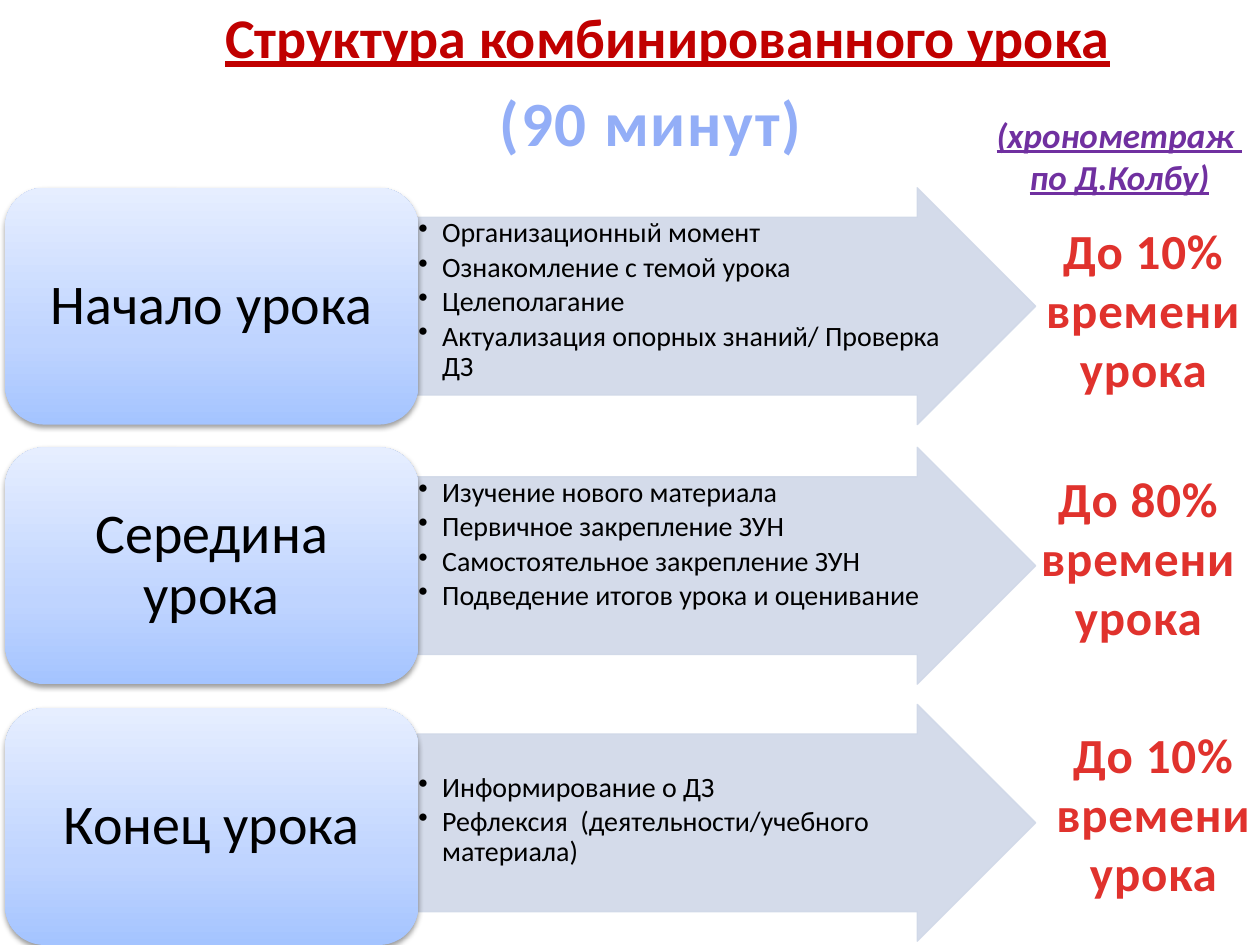
from lxml.etree import SubElement
from pptx import Presentation
from pptx.dml.color import RGBColor
from pptx.enum.shapes import MSO_SHAPE
from pptx.enum.text import MSO_ANCHOR, MSO_AUTO_SIZE, PP_ALIGN
from pptx.oxml import parse_xml
from pptx.oxml.ns import nsdecls, qn
from pptx.util import Inches, Pt

TITLE = "Структура комбинированного урока"
DURATION = "(90 минут)"
TIMING_NOTE = ["(хронометраж ", "по Д.Колбу)"]

STAGES = [
    {"name": "Начало урока", "box_top": 1.49, "arrow_top": 1.49, "list_inset": 0.01,
     "steps": ["Организационный момент", "Ознакомление с темой урока", "Целеполагание",
               "Актуализация опорных знаний/ Проверка ДЗ"],
     "share": "До 10% времени урока", "share_at": (7.87, 1.7)},
    {"name": "Середина урока", "box_top": 3.55, "arrow_top": 3.55, "list_inset": 0.01,
     "steps": ["Изучение нового материала", "Первичное закрепление ЗУН",
               "Самостоятельное закрепление ЗУН", "Подведение итогов урока и оценивание"],
     "share": "До 80% времени урока", "share_at": (7.83, 3.67)},
    {"name": "Конец урока", "box_top": 5.62, "arrow_top": 5.59, "list_inset": 0.31,
     "steps": ["Информирование о ДЗ", "Рефлексия  (деятельности/учебного материала)"],
     "share": "До 10% времени урока", "share_at": (7.95, 5.7)},
]

THEME = {
    "font": "Calibri",
    "arrow": "D0D8E8",
    "box_stops": [(0, "A4C4FF"), (35, "BFD4FF"), (100, "E6EEFF")],
    "share_stops": [(25, "E0322D"), (100, "A2201C")],
    "duration_fill": "0D7BFF",
    "duration_outline": "93AEF7",
    "title": {"size": 32, "color": "C00000", "bold": True, "underline": True},
    "duration": {"size": 36, "bold": True},
    "note": {"size": 20, "color": "7030A0", "bold": True, "italic": True, "underline": True},
    "stage": {"size": 32, "color": "000000"},
    "step": {"size": 16, "color": "000000"},
    "share": {"size": 28, "bold": True},
}

BOX_LEFT, BOX_WIDTH, ROW_HEIGHT = 0.04, 3.28, 1.88
ARROW_LEFT, ARROW_WIDTH, LIST_WIDTH = 3.31, 4.91, 4.21
SHAFT = 0.75


def gradient_xml(stops, angle):
    stop_xml = "".join(f'<a:gs pos="{place * 1000}"><a:srgbClr val="{color}"/></a:gs>'
                       for place, color in stops)
    return parse_xml(f'<a:gradFill {nsdecls("a")} rotWithShape="1"><a:gsLst>{stop_xml}</a:gsLst>'
                     f'<a:lin ang="{angle * 60000}" scaled="0"/></a:gradFill>')


def add_span(para, text, style):
    span = para.add_run()
    span.text = text
    span.font.name = THEME["font"]
    for name, value in style.items():
        if name == "size":
            span.font.size = Pt(value)
        elif name == "color":
            span.font.color.rgb = RGBColor.from_string(value)
        else:
            setattr(span.font, name, value)
    return span


def fill_frame(frame, lines, style, paragraph_format, insets=None):
    """Write one paragraph per line; insets are left, top, right, bottom in inches."""
    if insets:
        for side, inset in zip(("left", "top", "right", "bottom"), insets):
            setattr(frame, f"margin_{side}", Inches(inset))
    for index, line in enumerate(lines):
        para = frame.add_paragraph() if index else frame.paragraphs[0]
        for name, value in paragraph_format.items():
            setattr(para, name, value)
        add_span(para, line, style)


def add_text(page, place, lines, style, paragraph_format, wrap=False, grow=True, insets=None):
    frame = page.shapes.add_textbox(*map(Inches, place)).text_frame
    frame.word_wrap = wrap
    frame.auto_size = MSO_AUTO_SIZE.SHAPE_TO_FIT_TEXT if grow else MSO_AUTO_SIZE.NONE
    fill_frame(frame, lines, style, paragraph_format, insets)
    return frame


def add_arrow(page, top):
    arrow = page.shapes.add_shape(MSO_SHAPE.RIGHT_ARROW, *map(
        Inches, (ARROW_LEFT, top, ARROW_WIDTH, ROW_HEIGHT)))
    arrow.shadow.inherit = False
    arrow.adjustments[0] = SHAFT
    arrow.line.width = Pt(0.75)
    for fill in (arrow.fill, arrow.line.fill):
        fill.solid()
        fill.fore_color.rgb = RGBColor.from_string(THEME["arrow"])
    for color in list(arrow._element.spPr.iter(qn("a:srgbClr"))):
        SubElement(color, qn("a:alpha"), val="90000")


def add_steps(page, stage):
    top = stage["arrow_top"] + ROW_HEIGHT * (1 - SHAFT) / 2
    frame = add_text(page, (ARROW_LEFT, top, LIST_WIDTH, ROW_HEIGHT * SHAFT), stage["steps"],
                     THEME["step"], {"level": 1, "line_spacing": 0.9, "space_after": Pt(2.4)},
                     wrap=True, grow=False, insets=(0.01, stage["list_inset"], 0.01, 0.01))
    for para in frame.paragraphs:
        properties = para._p.get_or_add_pPr()
        properties.set("marL", str(Inches(0.19)))
        properties.set("indent", str(Inches(-0.19)))
        SubElement(properties, qn("a:buChar"), char="•")


def add_stage_box(page, stage):
    box = page.shapes.add_shape(MSO_SHAPE.ROUNDED_RECTANGLE, *map(
        Inches, (BOX_LEFT, stage["box_top"], BOX_WIDTH, ROW_HEIGHT)))
    box.line.fill.background()
    box.shadow.inherit = False
    properties = box._element.spPr
    properties.find(qn("a:prstGeom")).addnext(gradient_xml(THEME["box_stops"], 270))
    properties.find(qn("a:effectLst")).append(parse_xml(
        f'<a:outerShdw {nsdecls("a")} blurRad="{Pt(3.1)}" dist="{Pt(1.6)}" dir="5400000" '
        'rotWithShape="0"><a:srgbClr val="000000"><a:alpha val="38000"/></a:srgbClr>'
        '</a:outerShdw>'))
    box.text_frame.word_wrap = True
    box.text_frame.vertical_anchor = MSO_ANCHOR.MIDDLE
    fill_frame(box.text_frame, [stage["name"]], THEME["stage"],
               {"alignment": PP_ALIGN.CENTER, "line_spacing": 0.9}, (0.13, 0.07, 0.13, 0.07))


def add_duration(page):
    frame = add_text(page, (3.85, 0.61, 2.63, 0.71), [DURATION], THEME["duration"], CENTERED)
    properties = frame.paragraphs[0].runs[0].font._element
    properties.set("spc", "100")
    properties.insert(0, parse_xml(
        f'<a:solidFill {nsdecls("a")}><a:srgbClr val="{THEME["duration_fill"]}">'
        '<a:alpha val="6000"/></a:srgbClr></a:solidFill>'))
    properties.insert(0, parse_xml(
        f'<a:ln {nsdecls("a")} w="{Pt(1.42)}"><a:solidFill>'
        f'<a:srgbClr val="{THEME["duration_outline"]}"/></a:solidFill></a:ln>'))


def add_share(page, stage):
    frame = add_text(page, (*stage["share_at"], 2.41, 1.51), [stage["share"]],
                     THEME["share"], CENTERED, wrap=True)
    properties = frame.paragraphs[0].runs[0].font._element
    properties.set("spc", "50")
    properties.insert(0, gradient_xml(THEME["share_stops"], 90))


CENTERED = {"alignment": PP_ALIGN.CENTER}


def main():
    deck = Presentation()
    deck.slide_width, deck.slide_height = Inches(10), Inches(7.5)
    page = deck.slides.add_slide(deck.slide_layouts[6])
    add_text(page, (1.69, -0.03, 7.29, 0.64), [TITLE], THEME["title"], {})
    add_duration(page)
    for stage in STAGES:
        add_arrow(page, stage["arrow_top"])
        add_steps(page, stage)
        add_stage_box(page, stage)
    add_text(page, (7.8, 0.85, 2.17, 0.77), TIMING_NOTE, THEME["note"], CENTERED)
    for stage in STAGES:
        add_share(page, stage)
    deck.save("out.pptx")


if __name__ == "__main__":
    main()
